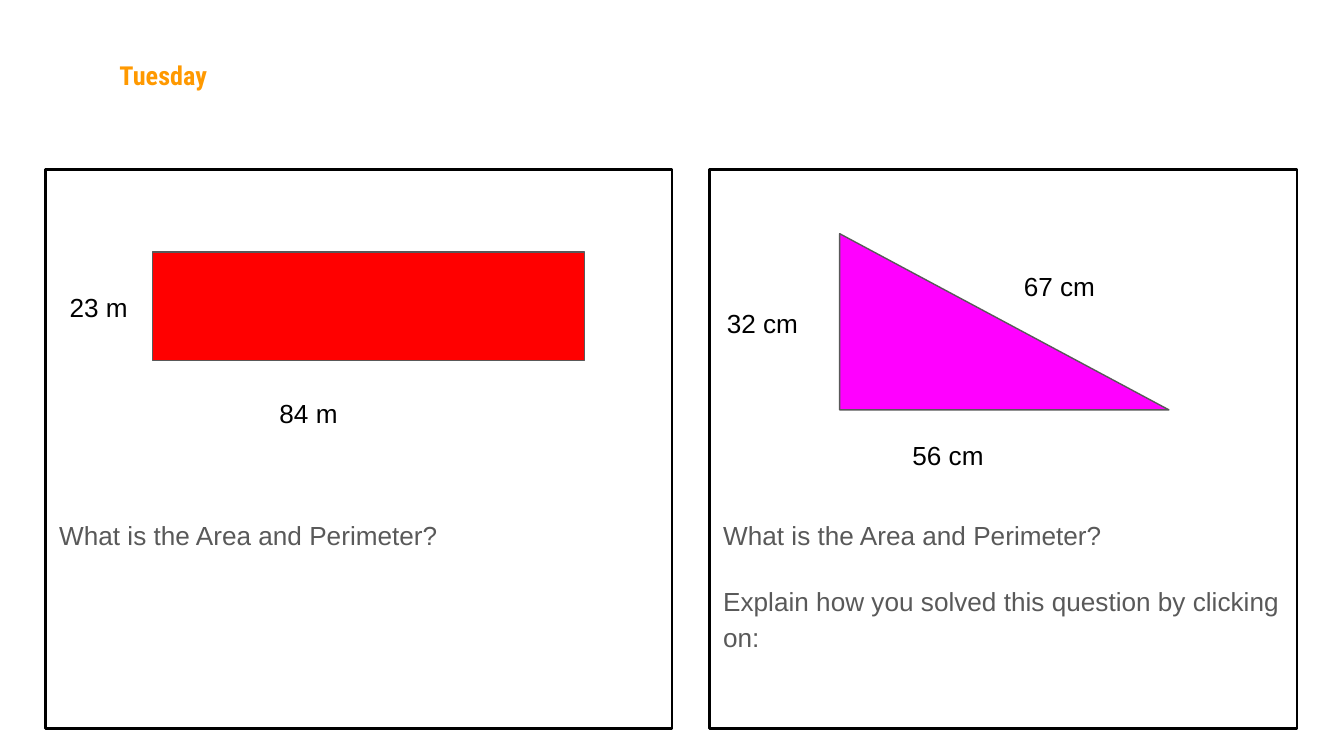
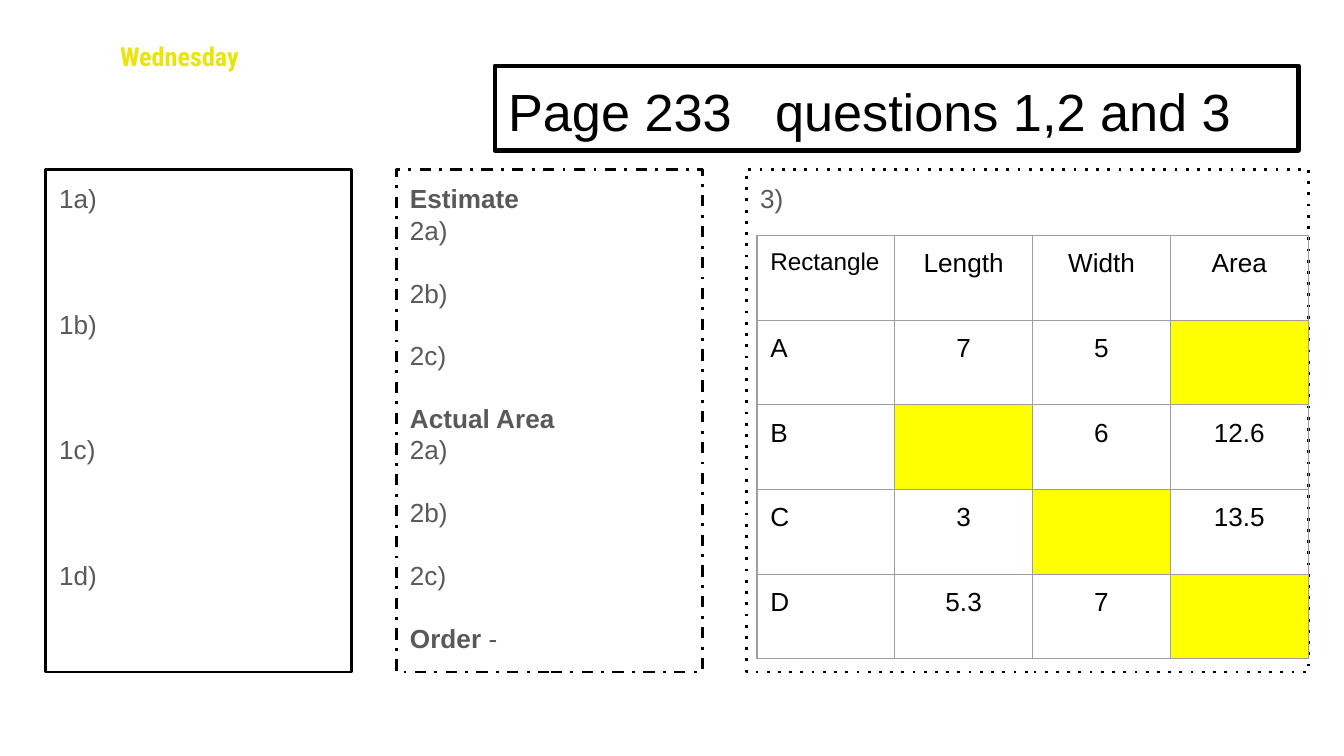
from dataclasses import dataclass

from lxml import etree
from pptx import Presentation
from pptx.dml.color import RGBColor
from pptx.enum.shapes import MSO_SHAPE
from pptx.enum.text import MSO_ANCHOR, MSO_AUTO_SIZE, PP_ALIGN
from pptx.oxml.ns import qn
from pptx.util import Pt

RECTANGLE = MSO_SHAPE.RECTANGLE
RIGHT_TRIANGLE = MSO_SHAPE.RIGHT_TRIANGLE
TOP = MSO_ANCHOR.TOP
NO_AUTOFIT = MSO_AUTO_SIZE.NONE
LEFT, CENTER = PP_ALIGN.LEFT, PP_ALIGN.CENTER
TWO_CONTENT, COMPARISON = 3, 4


@dataclass(frozen=True)
class Theme:
    black: str = "000000"
    grey: str = "595959"
    grid: str = "9E9E9E"
    red: str = "FF0000"
    magenta: str = "FF00FF"
    answer: str = "FFFF00"
    tuesday: tuple = ("FF9900", "B45F06")
    wednesday: tuple = ("EAE508", "BFB50A")
    font: str = "Arial"
    day_font: str = "Roboto Condensed"
    heading: float = 28
    text: float = 14
    small: float = 13
    line_height: float = 16.8
    inset: float = 7.2
    thin: float = 0.75
    panel: float = 1.5
    frame: float = 2.25


THEME = Theme()


def add_solid_line(parent, tag, color, width):
    line = etree.SubElement(parent, qn(tag), w=str(Pt(width)))
    fill = etree.SubElement(line, qn("a:solidFill"))
    etree.SubElement(fill, qn("a:srgbClr"), val=color)
    return line


class Worksheet:
    """Holds the theme and the slide being filled."""

    def __init__(self, theme):
        self.theme = theme
        self.deck = Presentation()
        self.deck.slide_width, self.deck.slide_height = Pt(720), Pt(405)
        self.page = None

    def new_page(self, layout):
        self.page = self.deck.slides.add_slide(self.deck.slide_layouts[layout])

    def place(self, shape, area):
        shape.left, shape.top, shape.width, shape.height = map(Pt, area)

    def style(self, span, color, size=None, bold=False, font=None):
        span.font.name = font or self.theme.font
        span.font.size = Pt(size or self.theme.text)
        span.font.bold = bold
        span.font.color.rgb = RGBColor.from_string(color)

    def outline(self, shape, color, width, dash="solid"):
        shape.line.color.rgb = RGBColor.from_string(color)
        shape.line.width = Pt(width)
        line = shape.element.spPr.find(qn("a:ln"))
        etree.SubElement(line, qn("a:prstDash"), val=dash)

    def prepare_frame(self, box, top=None, vertical=None):
        frame = box.text_frame
        frame.word_wrap = True
        frame.auto_size = NO_AUTOFIT
        frame.vertical_anchor = TOP
        inset = self.theme.inset
        frame.margin_left = frame.margin_right = Pt(inset)
        frame.margin_bottom = Pt(inset if vertical is None else vertical)
        frame.margin_top = frame.margin_bottom if top is None else Pt(top)
        return frame

    def text_box(self):
        return self.page.shapes.add_textbox(0, 0, 0, 0)

    def day(self, box, area, name, colors):
        self.place(box, area)
        frame = self.prepare_frame(box, vertical=3.6)
        frame.text = name
        para = frame.paragraphs[0]
        para.alignment = CENTER
        span = para.runs[0]
        color, edge = colors
        self.style(span, color, bold=True, font=self.theme.day_font)
        properties = span.font._element
        properties.insert(0, add_solid_line(properties, "a:ln", edge, self.theme.thin))

    def heading(self, area, text, tab):
        box = self.page.shapes.title
        self.place(box, area)
        self.outline(box, self.theme.black, self.theme.frame)
        frame = self.prepare_frame(box)
        frame.text = text
        para = frame.paragraphs[0]
        para.alignment = LEFT
        self.style(para.runs[0], self.theme.black, self.theme.heading)
        stops = etree.SubElement(para._p.get_or_add_pPr(), qn("a:tabLst"))
        etree.SubElement(stops, qn("a:tab"), pos=str(Pt(tab)), algn="l")

    def panel(self, index, area, lines, dash="solid", top=None, spacing=1.0):
        """Fill a body placeholder; each line is (space before, bold text, plain text)."""
        box = self.page.placeholders[index]
        self.place(box, area)
        self.outline(box, self.theme.black, self.theme.panel, dash)
        frame = self.prepare_frame(box, top)
        for number, (gap, bold_text, plain_text) in enumerate(lines):
            para = frame.add_paragraph() if number else frame.paragraphs[0]
            para.alignment = LEFT
            para.line_spacing = spacing
            para.space_before, para.space_after = Pt(gap), Pt(0)
            properties = para._p.get_or_add_pPr()
            properties.set("marL", "0")
            properties.set("indent", "0")
            etree.SubElement(properties, qn("a:buNone"))
            for text, bold in ((bold_text, True), (plain_text, False)):
                if text:
                    span = para.add_run()
                    span.text = text
                    self.style(span, self.theme.grey, bold=bold)

    def figure(self, kind, area, color):
        shape = self.page.shapes.add_shape(kind, *map(Pt, area))
        shape.shadow.inherit = False
        shape.fill.solid()
        shape.fill.fore_color.rgb = RGBColor.from_string(color)
        self.outline(shape, self.theme.grey, self.theme.thin)

    def measure(self, area, text):
        box = self.text_box()
        self.place(box, area)
        frame = self.prepare_frame(box)
        frame.text = text
        self.style(frame.paragraphs[0].runs[0], self.theme.black)

    def table(self, area, rows):
        """Draw a grid in which empty cells are highlighted for an answer."""
        table = self.page.shapes.add_table(len(rows), len(rows[0]), *map(Pt, area)).table
        table.first_row = table.horz_banding = False
        for row_number, row in enumerate(rows):
            for column, text in enumerate(row):
                cell = table.cell(row_number, column)
                cell.margin_left = cell.margin_right = Pt(self.theme.inset)
                cell.margin_top = cell.margin_bottom = Pt(self.theme.inset)
                properties = cell._tc.get_or_add_tcPr()
                for side in "LRTB":
                    add_solid_line(properties, f"a:ln{side}", self.theme.grid, self.theme.thin)
                if not text:
                    cell.fill.solid()
                    cell.fill.fore_color.rgb = RGBColor.from_string(self.theme.answer)
                    continue
                cell.fill.background()
                cell.text = text
                para = cell.text_frame.paragraphs[0]
                para.alignment = CENTER if column else LEFT
                corner = row_number == column == 0
                size = self.theme.small if corner else self.theme.text
                self.style(para.runs[0], self.theme.black, size)

    def remove_empty_placeholders(self):
        for box in list(self.page.placeholders):
            if not box.text_frame.text:
                box.element.getparent().remove(box.element)


def build_tuesday(sheet):
    theme = sheet.theme
    sheet.new_page(TWO_CONTENT)
    question = (0, "", "What is the Area and Perimeter?")
    explain = (16, "", "Explain how you solved this question by clicking on:")
    panels = ((1, 24.5, 335.5, [question]), (2, 380.2, 314.6, [question, explain]))
    for index, left, width, lines in panels:
        sheet.panel(index, (left, 90.7, width, 299.5), lines, top=185, spacing=1.15)
    sheet.day(sheet.page.shapes.title, (24.5, 28, 126, 63.4), "Tuesday", theme.tuesday)
    sheet.figure(RECTANGLE, (81.8, 135, 231.4, 58.1), theme.red)
    sheet.figure(RIGHT_TRIANGLE, (449.8, 125.2, 176.4, 94.4), theme.magenta)
    for area, text in (
        ((481.7, 228.2, 60.5, 28.8), "56 cm"),
        ((382.3, 157.7, 60.5, 35.3), "32 cm"),
        ((541.4, 137.5, 60.5, 28.8), "67 cm"),
        ((30.2, 149, 51.8, 35.3), "23 m"),
        ((142.6, 205.9, 75.6, 28.8), "84 m"),
    ):
        sheet.measure(area, text)


def build_wednesday(sheet):
    theme = sheet.theme
    blank = theme.line_height
    top, height = 90.7, 269.3
    sheet.new_page(COMPARISON)
    sheet.heading((265, 35.2, 430.6, 45.4), "Page 233\tquestions 1,2 and 3", tab=143)
    first = [(3 * blank if part != "a" else 0, "", f"1{part})") for part in "abcd"]
    parts = [(blank if part != "a" else 0, "", f"2{part})") for part in "abc"]
    second = [
        (0, "Estimate", ""), *parts,
        (blank, "Actual Area", ""), *parts,
        (blank, "Order ", "-"),
    ]
    sheet.panel(1, (24.5, top, 163.8, height), first)
    sheet.panel(2, (212.4, top, 163.8, height), second, "dashDot")
    sheet.panel(4, (400, top, 301, height), [(0, "", "3)")], "dot")
    sheet.day(sheet.text_box(), (24.5, 18, 143.3, 53.3), "Wednesday", theme.wednesday)
    sheet.table((405.5, 126.2, 295.4, 226.8), [
        ("Rectangle", "Length", "Width", "Area"),
        ("A", "7", "5", ""),
        ("B", "", "6", "12.6"),
        ("C", "3", "", "13.5"),
        ("D", "5.3", "7", ""),
    ])
    sheet.remove_empty_placeholders()


def main():
    sheet = Worksheet(THEME)
    build_tuesday(sheet)
    build_wednesday(sheet)
    sheet.deck.save("out.pptx")


if __name__ == "__main__":
    main()
